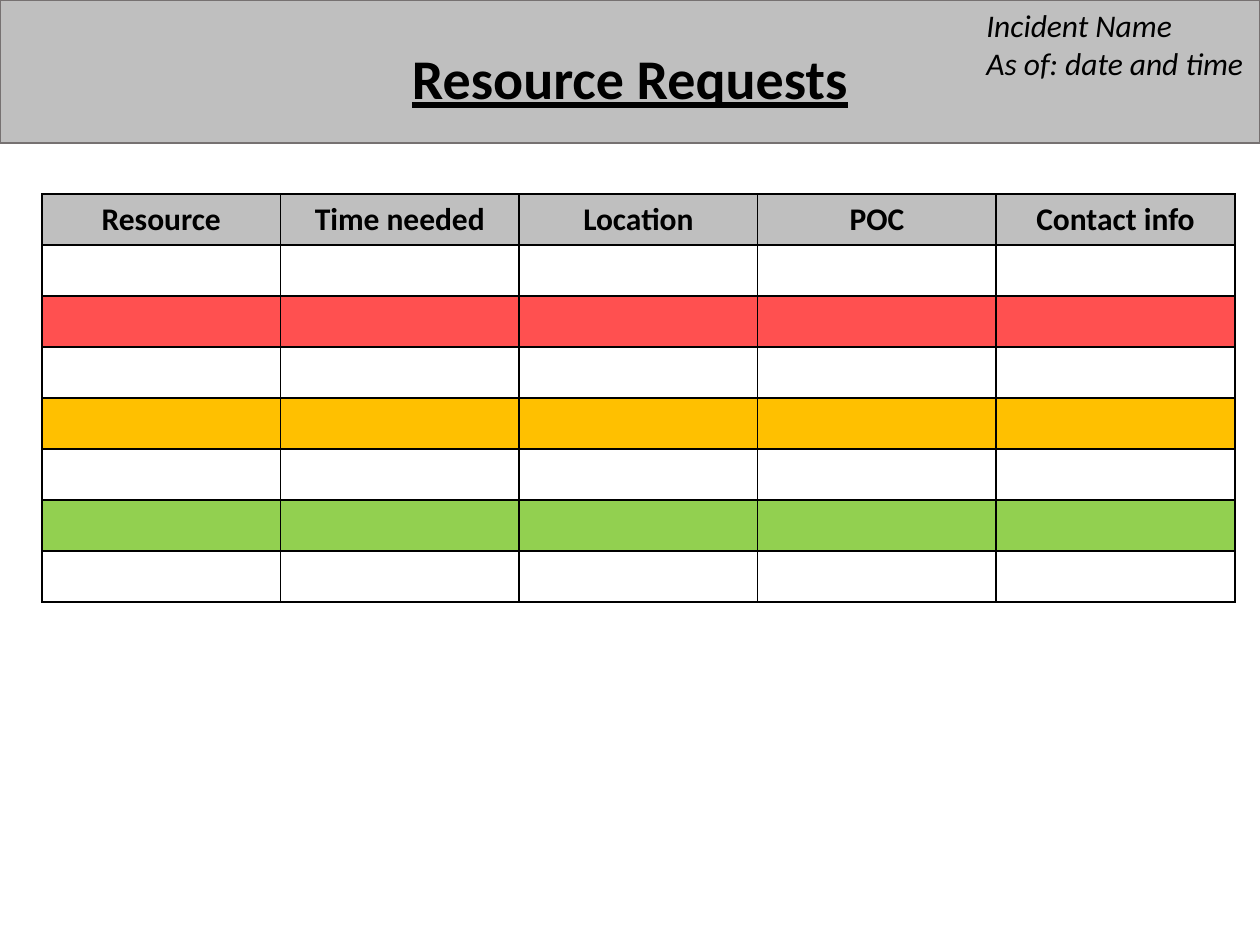
import pptx
import pptx.dml.color
import pptx.enum.shapes
import pptx.enum.text
import pptx.oxml
import pptx.oxml.ns
import pptx.util

RGBColor = pptx.dml.color.RGBColor
PP_ALIGN = pptx.enum.text.PP_ALIGN
MSO_ANCHOR = pptx.enum.text.MSO_ANCHOR

BLACK = RGBColor(0x00, 0x00, 0x00)
GREY = RGBColor(0xBF, 0xBF, 0xBF)
DARK_GREY = RGBColor(0x76, 0x71, 0x71)
RED = RGBColor(0xFF, 0x50, 0x50)
AMBER = RGBColor(0xFF, 0xC0, 0x00)
GREEN = RGBColor(0x92, 0xD0, 0x50)

TITLE = "Resource Requests"
INCIDENT = ["Incident Name", "As of: date and time"]
HEADERS = ["Resource", "Time needed", "Location", "POC", "Contact info"]
ROW_FILLS = [GREY, None, RED, None, AMBER, None, GREEN, None]

PX = 914400 // 126
TABLE_LEFT, TABLE_TOP, TABLE_WIDTH, ROW_HEIGHT = 42, 194, 1193, 51


def box(*lengths):
    return [n * PX for n in lengths]


def style(p, size, bold=False, italic=False, underline=False):
    p.font.name = "Calibri"
    p.font.size = pptx.util.Pt(size)
    p.font.bold = bold
    p.font.italic = italic
    p.font.underline = underline
    p.font.color.rgb = BLACK


def add_borders(cell):
    tcPr = cell._tc.get_or_add_tcPr()
    for i, side in enumerate(("lnL", "lnR", "lnT", "lnB")):
        tcPr.insert(i, pptx.oxml.parse_xml(
            f'<a:{side} {pptx.oxml.ns.nsdecls("a")} w="12700"><a:solidFill>'
            f'<a:srgbClr val="{BLACK}"/></a:solidFill></a:{side}>'))


def add_header(s):
    band = s.shapes.add_shape(pptx.enum.shapes.MSO_SHAPE.RECTANGLE, *box(0, 0, 1260, 143))
    band.shadow.inherit = False
    band.fill.solid()
    band.fill.fore_color.rgb = GREY
    band.line.color.rgb = DARK_GREY
    band.line.width = pptx.util.Pt(1)

    title = s.shapes.title
    title.element.addprevious(band.element)
    title.left, title.top, title.width, title.height = box(177, 37, 906, 81)
    tf = title.text_frame
    tf.text = TITLE
    tf.vertical_anchor = MSO_ANCHOR.TOP
    tf.auto_size = pptx.enum.text.MSO_AUTO_SIZE.NONE
    p = tf.paragraphs[0]
    p.alignment = PP_ALIGN.CENTER
    style(p, 32, bold=True, underline=True)

    tf = s.shapes.add_textbox(*box(974, 0, 286, 89)).text_frame
    tf.word_wrap = False
    tf.text = "\n".join(INCIDENT)
    for p in tf.paragraphs:
        style(p, 18, italic=True)


def add_requests(s):
    rows, cols = len(ROW_FILLS), len(HEADERS)
    area = box(TABLE_LEFT, TABLE_TOP, TABLE_WIDTH, ROW_HEIGHT * rows)
    table = s.shapes.add_table(rows, cols, *area).table
    table.first_row = False
    table.horz_banding = False
    for r, fill in enumerate(ROW_FILLS):
        for c, header in enumerate(HEADERS):
            cell = table.cell(r, c)
            if fill is None:
                cell.fill.background()
            else:
                cell.fill.solid()
                cell.fill.fore_color.rgb = fill
            add_borders(cell)
            if r == 0:
                cell.text = header
            p = cell.text_frame.paragraphs[0]
            p.alignment = PP_ALIGN.CENTER
            style(p, 18, bold=r == 0)


prs = pptx.Presentation()
prs.slide_width = pptx.util.Inches(10)
prs.slide_height = pptx.util.Inches(7.5)
s = prs.slides.add_slide(prs.slide_layouts[5])
add_header(s)
add_requests(s)
prs.save("out.pptx")
